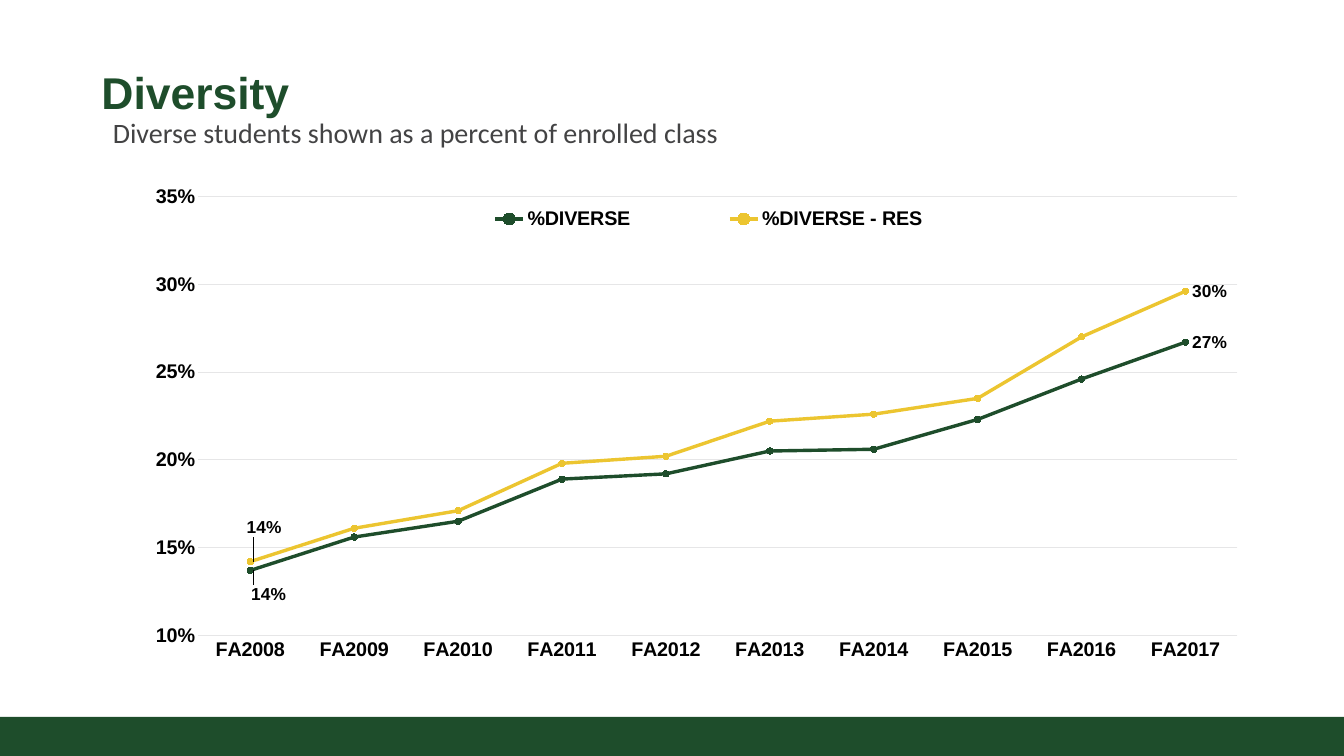
from lxml import etree
from pptx import Presentation
from pptx import util as u
from pptx.chart.data import CategoryChartData
from pptx.dml.color import RGBColor
from pptx.enum import chart as ch, shapes, text
from pptx.oxml import parse_xml
from pptx.oxml.ns import nsdecls, qn

PX = 9144  # EMU per px, 100 px to the inch
WIDTH, HEIGHT = 1511, 850
COLORS = {"green": "1E4D2B", "gold": "ECC530", "gray": "434344",
          "grid": "E6E6E7", "black": "000000"}
YEARS = [f"FA{year}" for year in range(2008, 2018)]
# name, colour, values, shift of the first label as fractions of the chart
SERIES = [
    ("%DIVERSE", "green",
     [0.137, 0.156, 0.165, 0.189, 0.192, 0.205, 0.206, 0.223, 0.246, 0.267],
     (-0.005, 0.044)),
    ("%DIVERSE - RES", "gold",
     [0.142, 0.161, 0.171, 0.198, 0.202, 0.222, 0.226, 0.235, 0.27, 0.296],
     (-0.009, -0.062)),
]


def px(*lengths):
    return [u.Emu(n * PX) for n in lengths]


def rgb(name):
    return RGBColor.from_string(COLORS[name])


def style_font(font, size, color="black", bold=True, name="Arial"):
    font.name, font.size, font.bold = name, u.Pt(size), bold
    font.color.rgb = rgb(color)


def style_line(line, color, width):
    line.color.rgb = rgb(color)
    line.width = u.Pt(width)


def place(sp, box):
    sp.left, sp.top, sp.width, sp.height = px(*box)


def write(sp, content, anchor=text.MSO_ANCHOR.TOP, bottom=5, **font):
    tf = sp.text_frame
    tf.word_wrap = True
    tf.auto_size = text.MSO_AUTO_SIZE.NONE
    tf.vertical_anchor = anchor
    tf.margin_left, tf.margin_bottom = px(10, bottom)
    p = tf.paragraphs[0]
    p.alignment = text.PP_ALIGN.LEFT
    r = p.add_run()
    r.text = content
    style_font(r.font, **font)


def add_band(slide, box, color):
    sp = slide.shapes.add_shape(shapes.MSO_SHAPE.RECTANGLE, *px(*box))
    sp.shadow.inherit = False
    sp.fill.solid()
    sp.fill.fore_color.rgb = rgb(color)
    sp.line.fill.background()


def manual_layout(x, y, w=None, h=None, inner=False):
    """Return a c:layout; without a size, x and y are offsets."""
    fields = [("layoutTarget", "inner")] if inner else []
    if w is not None:
        fields += [("xMode", "edge"), ("yMode", "edge")]
    fields += [("x", x), ("y", y)]
    if w is not None:
        fields += [("w", w), ("h", h)]
    body = "".join(f'<c:{tag} val="{val}"/>' for tag, val in fields)
    return parse_xml(f'<c:layout {nsdecls("c")}><c:manualLayout>{body}'
                     '</c:manualLayout></c:layout>')


def set_layout(parent, layout, after=None):
    for old in parent.findall(qn("c:layout")):
        parent.remove(old)
    if after is None:
        parent.insert(0, layout)
    else:
        parent.find(qn(after)).addnext(layout)


def add_leader_lines(labels):
    c15 = "http://schemas.microsoft.com/office/drawing/2012/chart"
    ext_list = etree.SubElement(labels, qn("c:extLst"))
    ext = etree.SubElement(ext_list, qn("c:ext"), nsmap={"c15": c15},
                           uri="{CE6537A1-D6FC-4f65-9D91-7224C49458BB}")
    etree.SubElement(ext, f"{{{c15}}}showLeaderLines", val="1")


def style_series(series, color, shift):
    series.smooth = False
    style_line(series.format.line, color, 2.75)
    marker = series.marker
    marker.style, marker.size = ch.XL_MARKER_STYLE.CIRCLE, 5
    marker.format.fill.solid()
    marker.format.fill.fore_color.rgb = rgb(color)
    marker.format.line.color.rgb = rgb(color)
    series.data_labels.show_value = False
    for index in (0, len(YEARS) - 1):
        label = series.points[index].data_label
        style_font(label.font, 14)
        label.position = ch.XL_LABEL_POSITION.RIGHT
    labels = series.data_labels._element
    set_layout(labels.find(qn("c:dLbl")), manual_layout(*shift), "c:idx")
    add_leader_lines(labels)


def style_axes(chart):
    for axis in (chart.category_axis, chart.value_axis):
        style_font(axis.tick_labels.font, 16)
        axis.major_tick_mark = axis.minor_tick_mark = ch.XL_TICK_MARK.NONE
    style_line(chart.category_axis.format.line, "grid", 0.75)
    axis = chart.value_axis
    axis.minimum_scale, axis.maximum_scale, axis.major_unit = 0.1, 0.35, 0.05
    axis.format.line.fill.background()
    style_line(axis.major_gridlines.format.line, "grid", 0.75)
    axis.tick_labels.number_format = "0%"
    axis.tick_labels.number_format_is_linked = False


def add_line_chart(slide, box):
    data = CategoryChartData(number_format="0%")
    data.categories = YEARS
    for name, _, values, _ in SERIES:
        data.add_series(name, values)
    chart = slide.shapes.add_chart(
        ch.XL_CHART_TYPE.LINE_MARKERS, *px(*box), data).chart
    style_font(chart.font, 10, bold=False)
    chart.has_title = False
    chart.plots[0].vary_by_categories = False
    style_axes(chart)
    for series, (_, color, _, shift) in zip(chart.plots[0].series, SERIES):
        style_series(series, color, shift)
    chart.has_legend = True
    legend = chart.legend
    legend.position = ch.XL_LEGEND_POSITION.BOTTOM
    legend.include_in_layout = False
    style_font(legend.font, 16)
    set_layout(legend._element, manual_layout(0.244, 0.1, 0.535, 0.06),
               "c:legendPos")
    plot_area = chart._chartSpace.chart.plotArea
    set_layout(plot_area, manual_layout(0.066, 0.089, 0.907, 0.8, inner=True))


def main():
    prs = Presentation()
    prs.slide_width, prs.slide_height = px(WIDTH, HEIGHT)
    slide = prs.slides.add_slide(prs.slide_layouts[5])
    add_band(slide, (0, 806, WIDTH, 44), "green")
    title = slide.shapes.title
    place(title, (104, 38, 1303, 111))
    write(title, "Diversity", anchor=text.MSO_ANCHOR.BOTTOM, bottom=16,
          size=36, color="green")
    add_line_chart(slide, (138, 166, 1288, 617))
    subtitle = slide.shapes.add_textbox(*px(117, 125, 935, 48))
    write(subtitle, "Diverse students shown as a percent of enrolled class",
          size=22.7, color="gray", bold=False, name="Calibri")
    prs.save("out.pptx")


if __name__ == "__main__":
    main()
